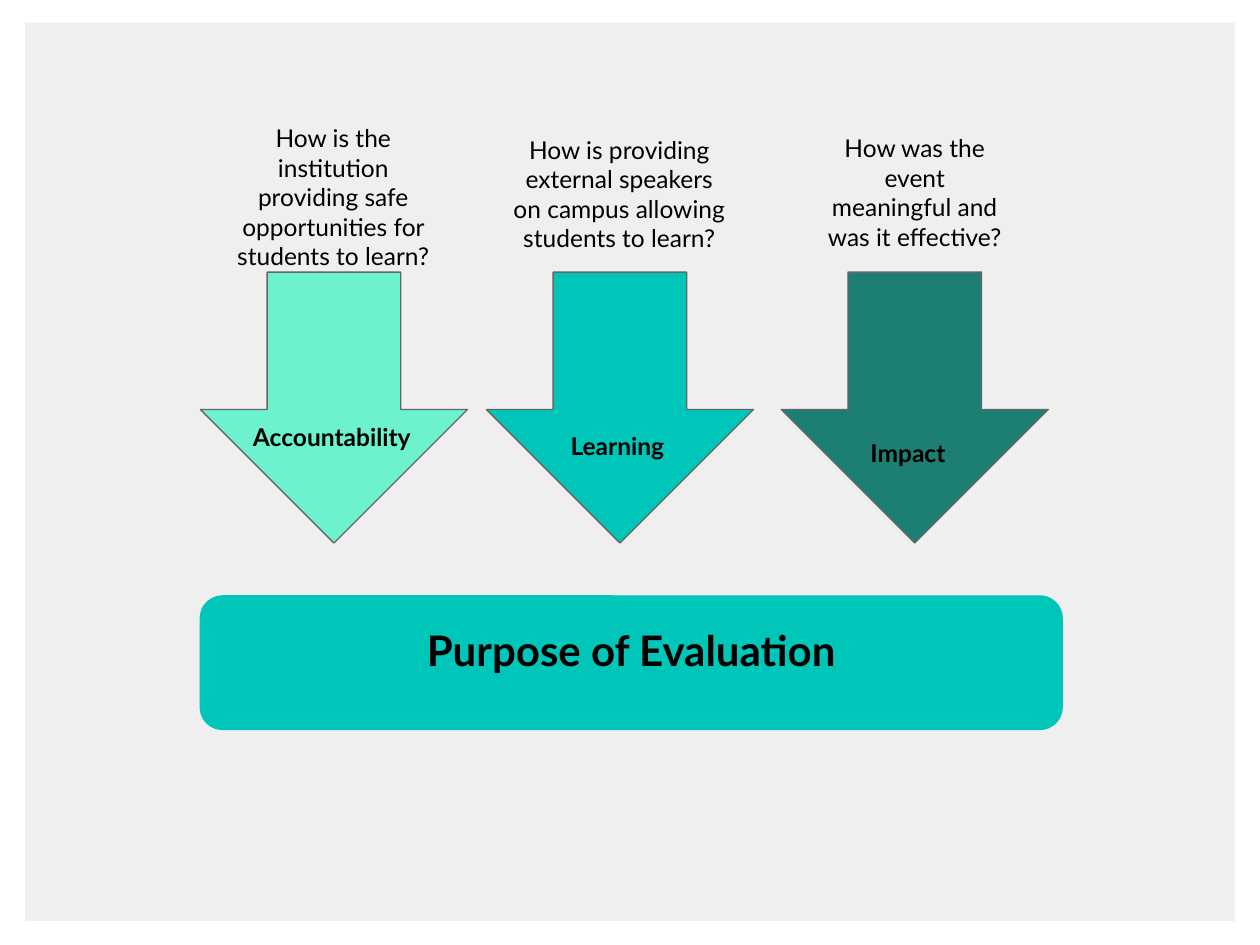
from dataclasses import dataclass

from pptx import Presentation
from pptx.dml.color import RGBColor
from pptx.enum.shapes import MSO_SHAPE
from pptx.enum.text import MSO_ANCHOR, MSO_AUTO_SIZE, PP_ALIGN
from pptx.util import Inches, Pt

RECT, ROUNDED, DOWN_ARROW = MSO_SHAPE.RECTANGLE, MSO_SHAPE.ROUNDED_RECTANGLE, MSO_SHAPE.DOWN_ARROW
TOP, MIDDLE = MSO_ANCHOR.TOP, MSO_ANCHOR.MIDDLE
LEFT, CENTER = PP_ALIGN.LEFT, PP_ALIGN.CENTER
NO_AUTOFIT = MSO_AUTO_SIZE.NONE
TITLE_ONLY = 5


@dataclass(frozen=True)
class Theme:
    font: str = "Lato"
    text: str = "000000"
    panel: str = "EFEFEF"
    mint: str = "6CF3CE"
    teal: str = "00C5B9"
    deep: str = "1D7E74"
    outline: str = "666666"
    title_size: int = 24
    body_size: int = 14
    line_width: float = 0.75


class SlideBuilder:
    def __init__(self, slide, theme):
        self.s = slide
        self.theme = theme

    def shape(self, kind, box, fill, line=None, adjustments=()):
        sp = self.s.shapes.add_shape(kind, *map(Inches, box))
        sp.shadow.inherit = False
        sp.fill.solid()
        sp.fill.fore_color.rgb = RGBColor.from_string(fill)
        if line:
            sp.line.color.rgb = RGBColor.from_string(line)
            sp.line.width = Pt(self.theme.line_width)
        else:
            sp.line.fill.background()
        for i, value in enumerate(adjustments):
            sp.adjustments[i] = value
        return sp

    def set_text(self, sp, text, size, bold=False, align=CENTER, anchor=TOP):
        tf = sp.text_frame
        tf.text = text
        tf.word_wrap = True
        tf.auto_size = NO_AUTOFIT
        tf.vertical_anchor = anchor
        tf.margin_left = tf.margin_right = Inches(0.1)
        tf.margin_top = tf.margin_bottom = Inches(0.1)
        p = tf.paragraphs[0]
        p.alignment = align
        p.font.name = self.theme.font
        p.font.size = Pt(size)
        p.font.bold = bold
        p.font.color.rgb = RGBColor.from_string(self.theme.text)

    def text(self, box, text, **style):
        sp = self.s.shapes.add_textbox(*map(Inches, box))
        self.set_text(sp, text, self.theme.body_size, **style)

    def title(self, box, text, band):
        sp = self.s.shapes.title
        sp.left, sp.top, sp.width, sp.height = map(Inches, box)
        self.set_text(sp, text, self.theme.title_size, bold=True)
        band.element.addnext(sp.element)


def main():
    prs = Presentation()
    prs.slide_width, prs.slide_height = Inches(10), Inches(7.5)
    theme = Theme()
    b = SlideBuilder(prs.slides.add_slide(prs.slide_layouts[TITLE_ONLY]), theme)

    b.shape(RECT, (0.2, 0.18, 9.6, 7.13), theme.panel)
    band = b.shape(ROUNDED, (1.59, 4.73, 6.84, 1.06), theme.teal, theme.teal, (0.167,))
    b.title((2.21, 4.86, 5.6, 0.62), "Purpose of Evaluation", band)

    columns = [
        (1.59, theme.mint, "Accountability", (1.91, 3.25, 1.66, 0.62),
         "How is the institution providing safe opportunities for students to learn?",
         (1.7, 0.88, 1.89, 0.57), TOP),
        (3.86, theme.teal, "Learning", (4.43, 3.32, 1.36, 0.37),
         "How is providing external speakers on campus allowing students to learn?",
         (3.97, 0.97, 1.89, 0.78), TOP),
        (6.2, theme.deep, "Impact", (6.81, 3.38, 0.99, 0.37),
         "How was the event meaningful and was it effective?",
         (6.43, 0.88, 1.66, 1.29), MIDDLE),
    ]
    for left, fill, label, label_box, question, question_box, anchor in columns:
        b.shape(DOWN_ARROW, (left, 2.16, 2.12, 2.15), fill, theme.outline, (0.5, 0.5))
        b.text(label_box, label, bold=True, align=LEFT)
        b.text(question_box, question, anchor=anchor)

    prs.save("out.pptx")


if __name__ == "__main__":
    main()
